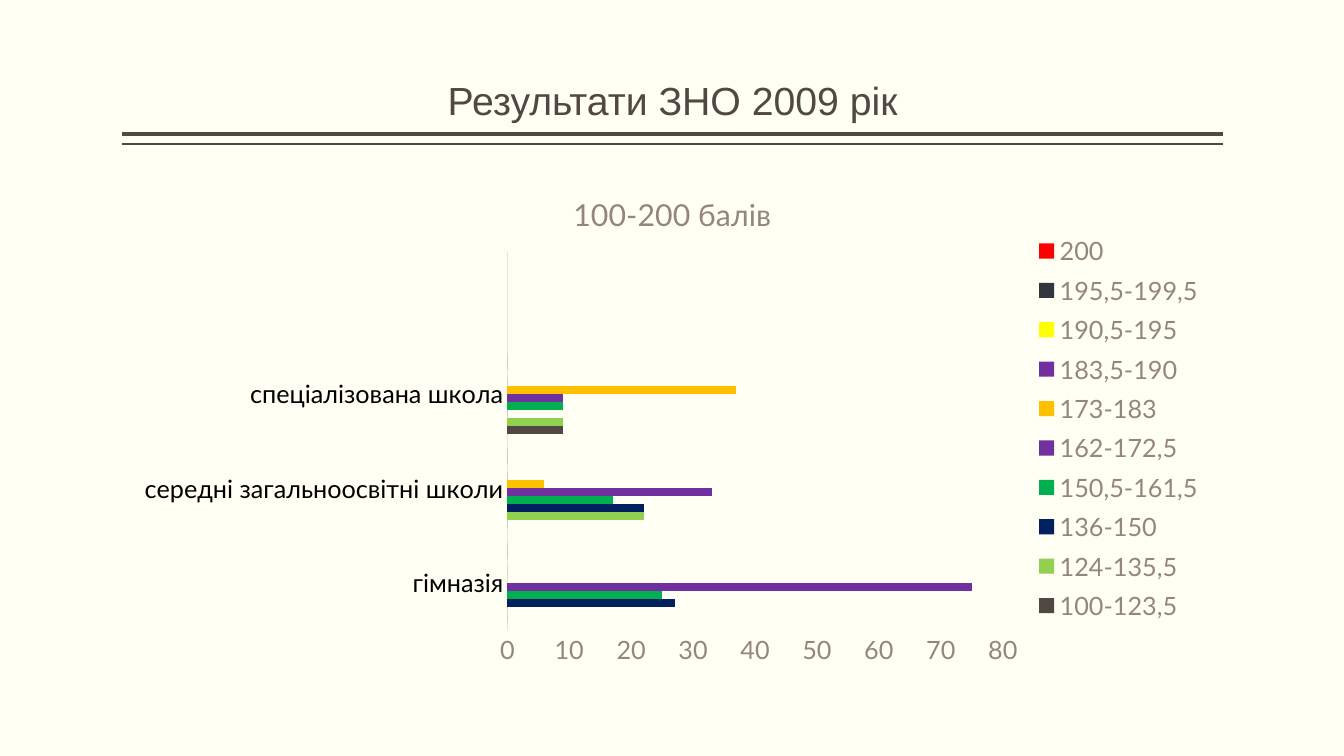
import pptx
import pptx.util
import pptx.dml.color
import pptx.chart.data
import pptx.enum.chart
import pptx.enum.text
import pptx.oxml
import pptx.oxml.ns
from dataclasses import dataclass

Inches = pptx.util.Inches
Pt = pptx.util.Pt


@dataclass(frozen=True)
class Theme:
    back: str = "FFFFF3"
    dark: str = "514843"
    soft: str = "94867E"
    axis: str = "E6E3E1"
    black: str = "000000"
    head: float = 28
    title: float = 21.6
    body: float = 18
    face: str = "Arial"
    font: str = "Lato"


THEME = Theme()
LEFT, WIDTH = 1.21, 10.92
GROUPS = ["гімназія", "середні загальноосвітні школи", "спеціалізована школа", ""]
SCORES = [
    ("100-123,5", (0, 0, 9, None), "514843"),
    ("124-135,5", (0, 22, 9, None), "92D050"),
    ("136-150", (27, 22, 0, None), "002060"),
    ("150,5-161,5", (25, 17, 9, None), "00B050"),
    ("162-172,5", (75, 33, 9, None), "7030A0"),
    ("173-183", (0, 6, 37, None), "FFC000"),
    ("183,5-190", (0, 0, 0, None), "7030A0"),
    ("190,5-195", (0, 0, 0, None), "FFFF00"),
    ("195,5-199,5", (0, 0, 0, None), "313640"),
    ("200", (0, 0, 0, None), "FF0000"),
]


def rgb(code):
    return pptx.dml.color.RGBColor.from_string(code)


def style(font, size, color, face=THEME.font):
    font.size = Pt(size)
    font.name = face
    font.bold = False
    font.color.rgb = rgb(color)


def add_head(slide, text):
    box = slide.shapes.add_textbox(Inches(LEFT), Inches(0.08), Inches(WIDTH), Inches(1.2))
    frame = box.text_frame
    frame.word_wrap = True
    frame.margin_left = frame.margin_right = 0
    frame.vertical_anchor = pptx.enum.text.MSO_ANCHOR.BOTTOM
    par = frame.paragraphs[0]
    par.alignment = pptx.enum.text.PP_ALIGN.CENTER
    par.line_spacing = 0.9
    run = par.add_run()
    run.text = text
    style(run.font, THEME.head, THEME.dark, THEME.face)


def add_rule(slide, top, width):
    rule = slide.shapes.add_connector(
        pptx.enum.shapes.MSO_CONNECTOR.STRAIGHT,
        Inches(LEFT + WIDTH), Inches(top), Inches(LEFT), Inches(top))
    rule.line.color.rgb = rgb(THEME.dark)
    rule.line.width = Pt(width)
    props = rule._element.spPr
    props.append(props.makeelement(pptx.oxml.ns.qn("a:effectLst"), {}))


def make_place(x, y, w, h, inner=False):
    target = '<c:layoutTarget val="inner"/>' if inner else ""
    sizes = "".join(f'<c:{key} val="{val}"/>' for key, val in zip("xywh", (x, y, w, h)))
    return pptx.oxml.parse_xml(
        f'<c:layout {pptx.oxml.ns.nsdecls("c")}><c:manualLayout>{target}'
        f'<c:xMode val="edge"/><c:yMode val="edge"/>{sizes}</c:manualLayout></c:layout>')


def set_place(node, place, index):
    for old in node.findall(pptx.oxml.ns.qn("c:layout")):
        node.remove(old)
    node.insert(index, place)


def set_axis(axis, color):
    axis.has_major_gridlines = False
    axis.major_tick_mark = pptx.enum.chart.XL_TICK_MARK.NONE
    axis.minor_tick_mark = pptx.enum.chart.XL_TICK_MARK.NONE
    style(axis.tick_labels.font, THEME.body, color)


def add_bars(slide):
    data = pptx.chart.data.CategoryChartData()
    data.categories = GROUPS
    for name, vals, _ in SCORES:
        data.add_series(name, vals)
    chart = slide.shapes.add_chart(
        pptx.enum.chart.XL_CHART_TYPE.BAR_CLUSTERED,
        Inches(LEFT), Inches(1.7), Inches(WIDTH), Inches(5), data).chart
    style(chart.font, THEME.body, THEME.dark)
    plot = chart.plots[0]
    plot.gap_width = 182
    plot.vary_by_categories = False
    for bar, (_, _, color) in zip(plot.series, SCORES):
        bar.invert_if_negative = False
        bar.format.fill.solid()
        bar.format.fill.fore_color.rgb = rgb(color)

    chart.has_title = True
    run = chart.chart_title.text_frame.paragraphs[0].add_run()
    run.text = "100-200 балів"
    style(run.font, THEME.title, THEME.soft)
    chart.chart_title.include_in_layout = False

    set_axis(chart.category_axis, THEME.black)
    chart.category_axis.format.line.color.rgb = rgb(THEME.axis)
    chart.category_axis.format.line.width = Pt(0.75)
    scale = chart.value_axis
    set_axis(scale, THEME.soft)
    scale.format.line.fill.background()
    scale.minimum_scale, scale.maximum_scale, scale.major_unit = 0, 80, 10

    chart.has_legend = True
    legend = chart.legend
    legend.position = pptx.enum.chart.XL_LEGEND_POSITION.RIGHT
    legend.include_in_layout = False
    style(legend.font, THEME.body, THEME.soft)
    set_place(legend._element, make_place(0.82, 0.11, 0.17, 0.8), 1)
    area = chart._chartSpace.chart.plotArea
    set_place(area, make_place(0.35, 0.16, 0.45, 0.75, True), 0)


def main():
    deck = pptx.Presentation()
    deck.slide_width, deck.slide_height = Inches(13.33), Inches(7.5)
    slide = deck.slides.add_slide(deck.slide_layouts[6])
    slide.background.fill.solid()
    slide.background.fill.fore_color.rgb = rgb(THEME.back)
    for top, width in ((1.33, 3), (1.43, 1)):
        add_rule(slide, top, width)
    add_head(slide, "Результати ЗНО 2009 рік")
    add_bars(slide)
    deck.save("out.pptx")


if __name__ == "__main__":
    main()
